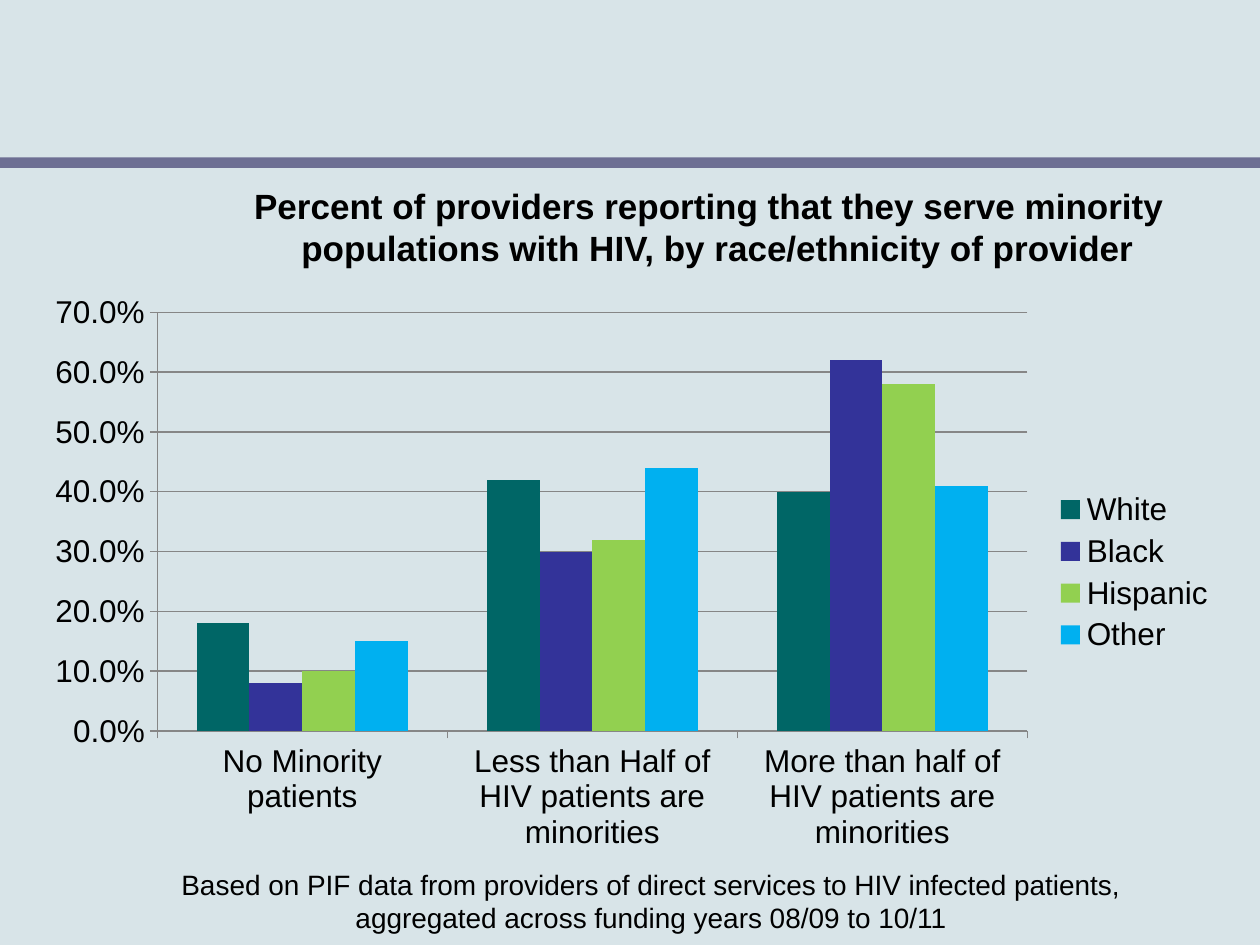
from lxml import etree
from pptx import Presentation
from pptx.chart import data
from pptx.dml.color import RGBColor
from pptx.enum import chart as ch, shapes, text
from pptx.oxml import ns
from pptx.util import Pt

BACKGROUND = RGBColor(0xD8, 0xE4, 0xE8)
BAND = RGBColor(0x6D, 0x6F, 0x93)
BLACK = RGBColor(0, 0, 0)
GRID = RGBColor(0x86, 0x86, 0x86)

TITLE = ("Percent of providers reporting that they serve minority "
         "populations with HIV, by race/ethnicity of provider")
NOTE = ("Based on PIF data from providers of direct services to HIV infected "
        "patients, aggregated across funding years 08/09 to 10/11")
CATEGORIES = ["No Minority patients",
              "Less than Half of HIV patients are minorities",
              "More than half of HIV patients are minorities"]
SERIES = [
    ("White", (0.18, 0.42, 0.40), RGBColor(0x00, 0x66, 0x66)),
    ("Black", (0.08, 0.30, 0.62), RGBColor(0x33, 0x33, 0x99)),
    ("Hispanic", (0.10, 0.32, 0.58), RGBColor(0x92, 0xD0, 0x50)),
    ("Other", (0.15, 0.44, 0.41), RGBColor(0x00, 0xB0, 0xF0)),
]
PLOT_LAYOUT = {"x": 0.105, "y": 0.05, "w": 0.727, "h": 0.725}


def set_attrs(obj, values):
    for name, value in values.items():
        setattr(obj, name, value)


def set_font(font, size, bold=False):
    set_attrs(font, {"name": "Arial", "size": Pt(size), "bold": bold})
    font.color.rgb = BLACK


def place(sp, box):
    set_attrs(sp, dict(zip(("left", "top", "width", "height"), map(Pt, box))))


def fill_text(sp, words, size, align, bold=False):
    tf = sp.text_frame
    set_attrs(tf, {"word_wrap": True, "auto_size": text.MSO_AUTO_SIZE.NONE,
                   "vertical_anchor": text.MSO_ANCHOR.TOP})
    p = tf.paragraphs[0]
    p.alignment = align
    r = p.add_run()
    r.text = words
    set_font(r.font, size, bold)
    return p


def add_band(s, box):
    sp = s.shapes.add_shape(shapes.MSO_SHAPE.RECTANGLE, *map(Pt, box))
    sp.shadow.inherit = False
    sp.fill.solid()
    sp.fill.fore_color.rgb = BAND
    sp.line.fill.background()


def add_title(s, box):
    """Fill the title placeholder with a hanging second line."""
    sp = s.shapes.title
    place(sp, box)
    p = fill_text(sp, TITLE, 20, text.PP_ALIGN.LEFT, bold=True)
    pPr = p._p.get_or_add_pPr()
    pPr.set("marL", str(Pt(27)))
    pPr.set("indent", str(-Pt(27)))


def add_note(s, box):
    sp = s.shapes.add_textbox(*map(Pt, box))
    fill_text(sp, NOTE, 16, text.PP_ALIGN.CENTER)


def fix_plot_area(chart):
    """Pin the inner plot area to fractions of the chart frame."""
    plot_area = chart._chartSpace.chart.plotArea
    for old in plot_area.findall(ns.qn("c:layout")):
        plot_area.remove(old)
    layout = etree.Element(ns.qn("c:layout"))
    manual = etree.SubElement(layout, ns.qn("c:manualLayout"))
    settings = {"layoutTarget": "inner", "xMode": "edge", "yMode": "edge",
                **PLOT_LAYOUT}
    for tag, value in settings.items():
        etree.SubElement(manual, ns.qn(f"c:{tag}")).set("val", str(value))
    plot_area.insert(0, layout)


def add_provider_chart(s, box):
    chart_data = data.CategoryChartData(number_format="0.0%")
    chart_data.categories = CATEGORIES
    for name, values, _ in SERIES:
        chart_data.add_series(name, values)
    chart = s.shapes.add_chart(ch.XL_CHART_TYPE.COLUMN_CLUSTERED,
                               *map(Pt, box), chart_data).chart
    set_attrs(chart, {"has_title": False, "has_legend": True})
    set_font(chart.font, 18)
    set_attrs(chart.legend, {"position": ch.XL_LEGEND_POSITION.RIGHT,
                             "include_in_layout": False})
    plot = chart.plots[0]
    set_attrs(plot, {"gap_width": 150, "overlap": 0,
                     "vary_by_categories": False})
    for series, (_, _, color) in zip(plot.series, SERIES):
        series.format.fill.solid()
        series.format.fill.fore_color.rgb = color

    value_axis = chart.value_axis
    set_attrs(value_axis, {"minimum_scale": 0, "maximum_scale": 0.7,
                           "major_unit": 0.1, "has_major_gridlines": True})
    set_attrs(value_axis.tick_labels, {"number_format": "0.0%",
                                       "number_format_is_linked": False})
    for axis in (chart.category_axis, value_axis):
        axis.major_tick_mark = ch.XL_TICK_MARK.OUTSIDE
    for part in (chart.category_axis, value_axis, value_axis.major_gridlines):
        line = part.format.line
        line.color.rgb = GRID
        line.width = Pt(0.75)
    fix_plot_area(chart)


def main():
    prs = Presentation()
    set_attrs(prs, {"slide_width": Pt(720), "slide_height": Pt(540)})
    s = prs.slides.add_slide(prs.slide_layouts[5])
    s.background.fill.solid()
    s.background.fill.fore_color.rgb = BACKGROUND
    add_band(s, (0, 90, 720, 6))
    add_title(s, (138, 102, 552, 42))
    add_provider_chart(s, (18, 162, 684, 330))
    add_note(s, (78, 492, 588, 46))
    prs.save("out.pptx")


if __name__ == "__main__":
    main()
